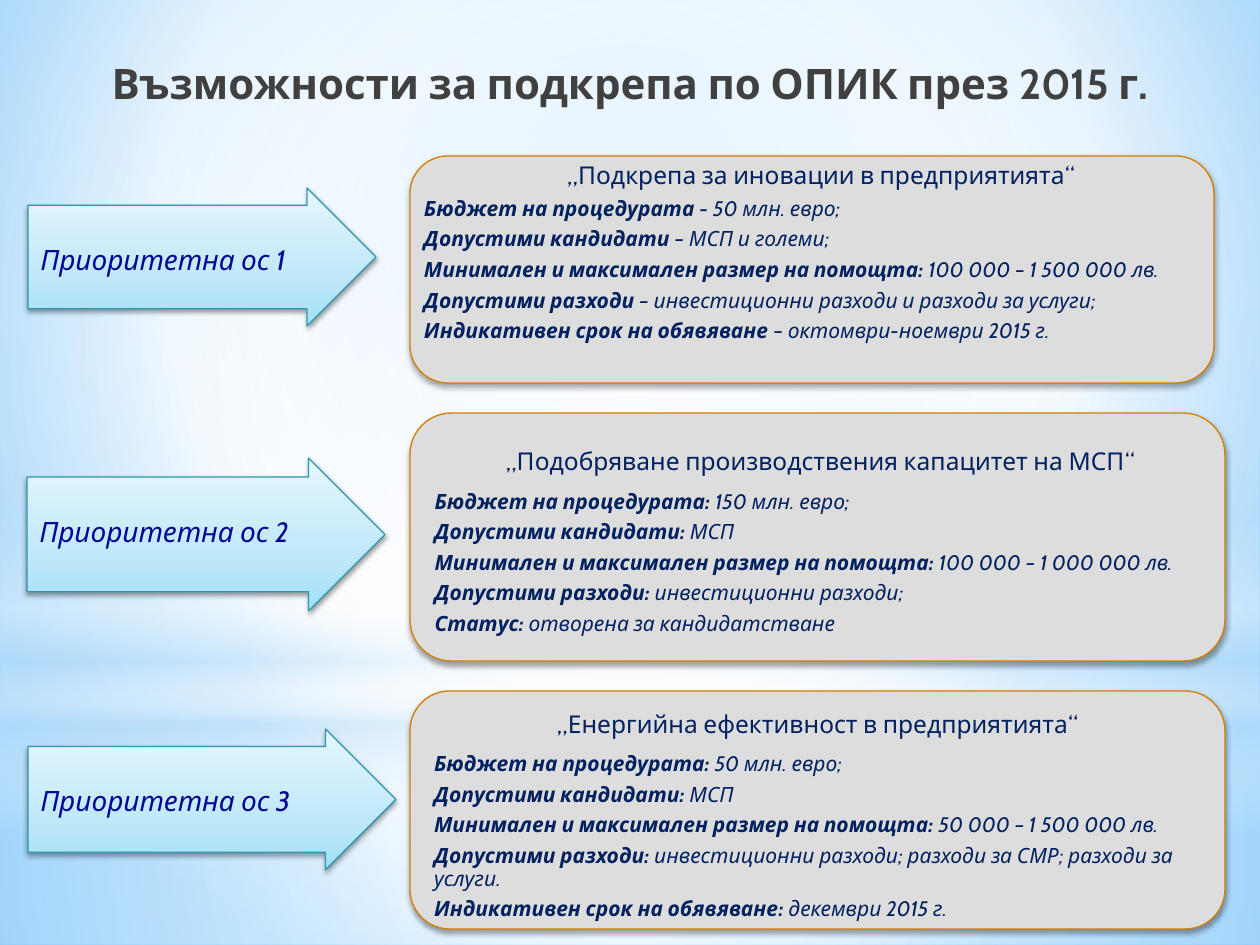
from pptx import Presentation
from pptx.dml.color import RGBColor
from pptx.enum.shapes import MSO_SHAPE
from pptx.enum.text import MSO_ANCHOR, PP_ALIGN
from pptx.oxml import parse_xml
from pptx.oxml.ns import nsdecls, qn
from pptx.util import Pt

RECT, OVAL = MSO_SHAPE.RECTANGLE, MSO_SHAPE.OVAL
ARROW, ROUND = MSO_SHAPE.RIGHT_ARROW, MSO_SHAPE.ROUNDED_RECTANGLE
TOP, MIDDLE = MSO_ANCHOR.TOP, MSO_ANCHOR.MIDDLE
LEFT, CENTER = PP_ALIGN.LEFT, PP_ALIGN.CENTER

FONT = "Cabin"
COLORS = {
    "title": "404040", "navy": "002060", "axis": "050595",
    "panel": "DDDDDD", "rim": "D47D00", "edge": "3096AD",
    "white": "FFFFFF", "haze": "B4DCFA", "sky": "9ED5FF", "deep": "5BB9FF",
    "low": "A2E0F8", "mid": "BFE8F9", "high": "E5F7FE", "black": "000000",
}
MIDPOINT = (50, 50, 50, 50)

# Backdrop layers: shape, box, stops (position, colour, opacity), focus or None
LAYERS = [
    (RECT, (0, 703, 1260, 242),
     [(0, "white", 91), (37, "white", 76), (100, "haze", 79)], MIDPOINT),
    (RECT, (0, 0, 1260, 703),
     [(0, "white", 89), (48, "white", 62), (100, "haze", 79)], MIDPOINT),
    (RECT, (0, 519, 1260, 315),
     [(0, "white", 0), (29, "white", 30), (45, "haze", 40),
      (55, "white", 26), (65, "haze", 60), (100, "white", 0)], None),
    (OVAL, (0, 221, 1260, 703),
     [(0, "white", 100), (56, "white", 0)], MIDPOINT),
]
BUDGET, WHO = "Бюджет на процедурата", "Допустими кандидати"
SIZE = "Минимален и максимален размер на помощта:"
COSTS, TERM = "Допустими разходи", "Индикативен срок на обявяване"

# Arrow box, panel box, heading, heading spacing, first row spacing, rows
AXES = [
    ((28, 188, 348, 138), (410, 156, 804, 227),
     "„Подкрепа за иновации в предприятията“", 0.9, 0.9,
     [(BUDGET + " - ", "50 млн. евро;"),
      (WHO + " ", "– МСП и големи;"),
      (SIZE, " 100 000 – 1 500 000 лв."),
      (COSTS + " ", "– инвестиционни разходи и разходи за услуги;"),
      (TERM + " ", "– октомври-ноември 2015 г.")]),
    ((27, 458, 358, 153), (410, 413, 815, 248),
     " „Подобряване производствения капацитет на МСП“", 1.5, 1.5,
     [(BUDGET + ": ", "150 млн. евро;"),
      (WHO + ": ", "МСП"),
      (SIZE, " 100 000 – 1 000 000 лв."),
      (COSTS + ": ", "инвестиционни разходи;"),
      ("Статус: ", "отворена за кандидатстване")]),
    ((28, 729, 368, 141), (410, 691, 815, 238),
     "„Енергийна ефективност в предприятията“", 1, 1.5,
     [(BUDGET + ": ", "50 млн. евро;"),
      (WHO + ": ", "МСП"),
      (SIZE, " 50 000 – 1 500 000 лв."),
      (COSTS + ": ", "инвестиционни разходи; разходи за СМР; разходи за услуги."),
      (TERM + ": ", "декември 2015 г.")]),
]


def px(n):
    return round(n * 914400 / 126)


def rgb(name):
    return RGBColor.from_string(COLORS[name])


def blend(fill, root, stops, focus=None, angle=90):
    """Give a fill a gradient, radial when a focus is set."""
    fill.solid()
    old = next(root.iter(qn("a:solidFill")))
    marks = "".join(
        f'<a:gs pos="{pos * 1000}"><a:srgbClr val="{COLORS[name]}">'
        f'<a:alpha val="{alpha * 1000}"/></a:srgbClr></a:gs>'
        for pos, name, alpha in stops)
    if focus:
        sides = " ".join(f'{s}="{v * 1000}"' for s, v in zip("ltrb", focus))
        way = f'<a:path path="circle"><a:fillToRect {sides}/></a:path>'
    else:
        way = f'<a:lin ang="{angle * 60000}" scaled="0"/>'
    old.getparent().replace(old, parse_xml(
        f'<a:gradFill {nsdecls("a")} rotWithShape="1">'
        f'<a:gsLst>{marks}</a:gsLst>{way}</a:gradFill>'))


def add_form(slide, kind, box):
    form = slide.shapes.add_shape(kind, *map(px, box))
    form.shadow.inherit = False
    return form


def outline(form, name):
    form.line.color.rgb = rgb(name)
    form.line.width = Pt(0.75)


def shade(form, alpha, dist):
    form._element.spPr.find(qn("a:effectLst")).append(parse_xml(
        f'<a:outerShdw {nsdecls("a")} blurRad="{Pt(3.1)}" dist="{Pt(dist)}" '
        f'dir="5400000" rotWithShape="0"><a:srgbClr val="{COLORS["black"]}">'
        f'<a:alpha val="{alpha * 1000}"/></a:srgbClr></a:outerShdw>'))


def style(run, size, name, bold=False, italic=False):
    font = run.font
    font.name, font.size = FONT, Pt(size)
    font.bold, font.italic = bold, italic
    font.color.rgb = rgb(name)


def add_title(slide, text):
    title = slide.shapes.title
    title.left, title.top, title.width, title.height = map(px, (0, 0, 1260, 165))
    frame = title.text_frame
    frame.text = text
    frame.vertical_anchor = MIDDLE
    frame.paragraphs[0].alignment = CENTER
    style(frame.paragraphs[0].runs[0], 24, "title", bold=True)
    # Bring the title in front of the backdrop
    title._element.getparent().append(title._element)


def add_arrow(slide, box, text):
    arrow = add_form(slide, ARROW, box)
    arrow.adjustments[0], arrow.adjustments[1] = 0.75, 0.5
    blend(arrow.fill, arrow._element.spPr,
          [(0, "low", 100), (35, "mid", 100), (100, "high", 100)], angle=270)
    outline(arrow, "edge")
    shade(arrow, 38, 1.6)
    frame = arrow.text_frame
    frame.text = text
    frame.vertical_anchor = TOP
    frame.margin_top = px(37)
    frame.paragraphs[0].alignment = LEFT
    style(frame.paragraphs[0].runs[0], 16, "axis", italic=True)


def add_panel(slide, box):
    panel = add_form(slide, ROUND, box)
    panel.fill.solid()
    panel.fill.fore_color.rgb = rgb("panel")
    outline(panel, "rim")
    shade(panel, 35, 1.8)
    return panel.text_frame


def add_note(slide, box):
    frame = slide.shapes.add_textbox(*map(px, box)).text_frame
    frame.margin_left = frame.margin_right = px(8)
    frame.margin_top = frame.margin_bottom = px(4)
    return frame


def write(frame, anchor, head, space, first, rows):
    frame.word_wrap = True
    frame.vertical_anchor = anchor
    frame.text = head
    top = frame.paragraphs[0]
    top.alignment, top.line_spacing = CENTER, space
    top.space_after = px(8 if space < 1 else 0)
    style(top.runs[0], 14, "navy")
    for i, row in enumerate(rows):
        para = frame.add_paragraph()
        para.alignment = LEFT
        para.line_spacing = 0.9 if i else first
        para.space_after = px(8)
        for text, bold in zip(row, (True, False)):
            run = para.add_run()
            run.text = text
            style(run, 12, "navy", bold, italic=True)


def main():
    deck = Presentation()
    deck.slide_width, deck.slide_height = px(1260), px(945)
    slide = deck.slides.add_slide(deck.slide_layouts[5])

    # Backdrop
    blend(slide.background.fill, slide._element,
          [(0, "sky", 100), (60, "white", 100), (100, "deep", 100)],
          (20, 10, 20, 60))
    for kind, box, stops, focus in LAYERS:
        layer = add_form(slide, kind, box)
        blend(layer.fill, layer._element.spPr, stops, focus)
        layer.line.fill.background()

    add_title(slide, "Възможности за подкрепа по ОПИК през 2015 г.")

    # One arrow and one panel for each priority axis
    for num, (tip, box, *words) in enumerate(AXES, 1):
        add_arrow(slide, tip, f"Приоритетна ос {num}")
        frame, anchor = add_panel(slide, box), TOP
        if num == 1:  # this panel's text sits in its own box
            frame, anchor = add_note(slide, (416, 135, 810, 237)), MIDDLE
        write(frame, anchor, *words)

    deck.save("out.pptx")


if __name__ == "__main__":
    main()
